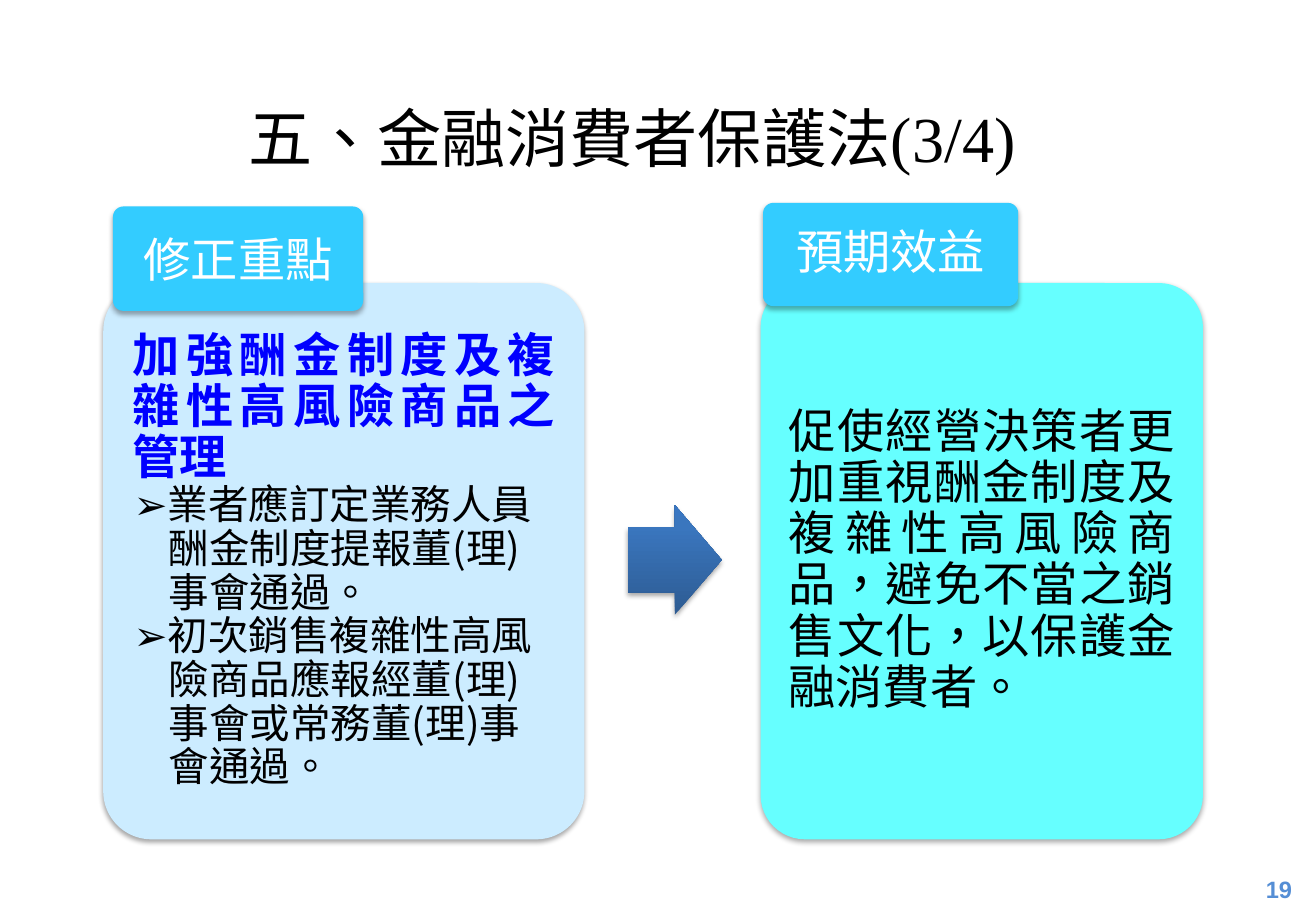
import pptx
import pptx.util
import pptx.dml.color
import pptx.enum.shapes
import pptx.enum.text
import pptx.oxml
import pptx.oxml.ns
from lxml import etree

Inches = pptx.util.Inches
SHAPES = pptx.enum.shapes.MSO_SHAPE
ALIGN = pptx.enum.text.PP_ALIGN
ANCHOR = pptx.enum.text.MSO_ANCHOR
SERIF = "Times New Roman"
SANS = "Noto Sans CJK SC"
NAMESPACE = pptx.oxml.ns.nsdecls("a")

SHADOW = f"""<a:effectLst {NAMESPACE}>
  <a:outerShdw blurRad="39370" dist="22860" dir="5400000" rotWithShape="0">
    <a:srgbClr val="000000"><a:alpha val="35000"/></a:srgbClr>
  </a:outerShdw></a:effectLst>"""
ARROW_GRADIENT = f"""<a:gradFill {NAMESPACE} rotWithShape="1"><a:gsLst>
  <a:gs pos="0"><a:srgbClr val="2D5B92"/></a:gs>
  <a:gs pos="80000"><a:srgbClr val="3A76BE"/></a:gs>
  <a:gs pos="100000"><a:srgbClr val="3876C2"/></a:gs>
  </a:gsLst><a:lin ang="16200000" scaled="0"/></a:gradFill>"""


def add_shadowed_shape(kind, box, color, adjustments):
    shape = slide.shapes.add_shape(kind, *map(Inches, box))
    for index, value in enumerate(adjustments):
        shape.adjustments[index] = value
    shape.fill.solid()
    shape.fill.fore_color.rgb = pptx.dml.color.RGBColor.from_string(color)
    shape.line.fill.background()
    shape.shadow.inherit = False
    properties = shape._element.spPr
    properties.replace(properties.find(pptx.oxml.ns.qn("a:effectLst")),
                       pptx.oxml.parse_xml(SHADOW))
    return shape


def add_text(box, paragraphs, anchor=ANCHOR.MIDDLE, insets=(0.1, 0.05)):
    """Add a text box; each paragraph is (format, hanging, runs), each run (text, font, size, color, bold)."""
    text_box = slide.shapes.add_textbox(*map(Inches, box))
    frame = text_box.text_frame
    horizontal, vertical = map(Inches, insets)
    frame_format = {"word_wrap": True, "vertical_anchor": anchor,
                    "margin_left": horizontal, "margin_right": horizontal,
                    "margin_top": vertical, "margin_bottom": vertical}
    for name, value in frame_format.items():
        setattr(frame, name, value)
    for index, (paragraph_format, hanging, runs) in enumerate(paragraphs):
        paragraph = frame.add_paragraph() if index else frame.paragraphs[0]
        for name, value in paragraph_format.items():
            setattr(paragraph, name, value)
        properties = paragraph._p.get_or_add_pPr()
        properties.set("hangingPunct", "0")
        if hanging:
            properties.set("marL", str(Inches(0.3)))
            properties.set("indent", str(Inches(-0.29)))
        for text, font, size, color, bold in runs:
            run = paragraph.add_run()
            run.text = text
            for name, value in {"name": font, "size": pptx.util.Pt(size), "bold": bold}.items():
                setattr(run.font, name, value)
            run.font.color.rgb = pptx.dml.color.RGBColor.from_string(color)
            run_properties = run._r.get_or_add_rPr()
            run_properties.set("lang", "zh-TW")
            east_asian = etree.SubElement(run_properties, pptx.oxml.ns.qn("a:ea"))
            east_asian.set("typeface", SANS)
    return text_box


presentation = pptx.Presentation()
presentation.slide_width = Inches(10.83)
presentation.slide_height = Inches(7.5)
slide = presentation.slides.add_slide(presentation.slide_layouts[6])

centered = {"alignment": ALIGN.CENTER}
justified = {"alignment": ALIGN.JUSTIFY}
tight = {"line_spacing": 0.9}

# Page number and title
add_text((10.22, 7.14, 0.61, 0.36),
         [(centered, False, [("19", "Arial", 14, "558ED5", True)])])
title = add_text((1.95, 0.76, 6.93, 0.74),
                 [(justified, False, [("五、金融消費者保護法(3/4)", SERIF, 38, "000000", False)])],
                 ANCHOR.TOP)
title.text_frame.auto_size = pptx.enum.text.MSO_AUTO_SIZE.SHAPE_TO_FIT_TEXT

# Cards
amendments = [
    (justified | tight, False,
     [("加強酬金制度及複雜性高風險商品之管理", SERIF, 28, "0000FF", True)]),
    (tight, True,
     [("➢業者", SERIF, 24, "000000", False),
      ("應訂定業務人員酬金制度提報董(理)事會通過。", SANS, 24, "000000", False)]),
    (tight, True,
     [("➢", SERIF, 24, "000000", False),
      ("初次銷售複雜性高風險商品應報經董(理)事會或常務董(理)事會通過。", SANS, 24, "000000", False)]),
]
benefits = [
    (justified | tight, False,
     [("促使經營決策者更加重視酬金制度及複雜性高風險商品，避免不當之銷售文化，以保護金融消費者。",
       SANS, 28, "000000", False)]),
]
card_top, card_height = 2.33, 4.58
for left, width, padding, color, paragraphs in [(0.85, 3.96, 0.12, "CCECFF", amendments),
                                                (6.26, 3.64, 0.11, "66FFFF", benefits)]:
    add_shadowed_shape(SHAPES.ROUNDED_RECTANGLE, (left, card_top, width, card_height), color, [0.1])
    add_text((left + padding, card_top + padding,
              width - 2 * padding, card_height - 2 * padding),
             paragraphs, insets=(0.12, 0.12))

# Arrow between the cards
arrow = add_shadowed_shape(SHAPES.RIGHT_ARROW, (5.17, 4.16, 0.77, 0.9), "3A76BE", [0.6, 0.5])
arrow_properties = arrow._element.spPr
arrow_properties.replace(arrow_properties.find(pptx.oxml.ns.qn("a:solidFill")),
                         pptx.oxml.parse_xml(ARROW_GRADIENT))

# Heading tabs over the cards
tab_padding = 0.03
for left, top, width, height, heading, spacing in [(0.93, 1.7, 2.06, 0.86, "修正重點", {}),
                                                   (6.28, 1.67, 2.1, 0.85, "預期效益", tight)]:
    add_shadowed_shape(SHAPES.ROUNDED_RECTANGLE, (left, top, width, height), "33CCFF", [0.1])
    add_text((left + tab_padding, top + tab_padding,
              width - 2 * tab_padding, height - 2 * tab_padding),
             [(centered | spacing, False, [(heading, SERIF, 28, "FFFFFF", False)])],
             insets=(0.06, 0.04))

presentation.save("out.pptx")
